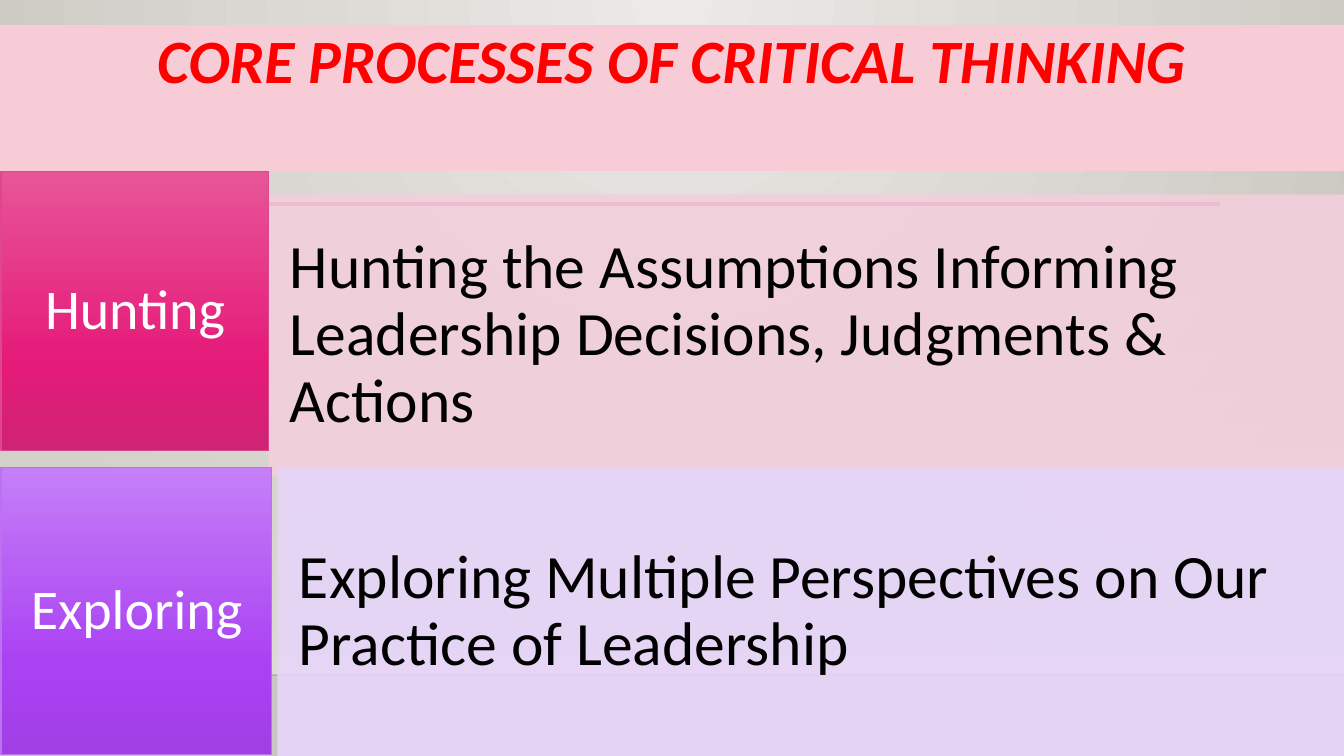
from dataclasses import dataclass

from lxml.etree import SubElement
from pptx import Presentation
from pptx.dml.color import RGBColor
from pptx.enum.shapes import MSO_CONNECTOR, MSO_SHAPE
from pptx.enum.text import MSO_ANCHOR, MSO_AUTO_SIZE, PP_ALIGN
from pptx.oxml.ns import qn
from pptx.util import Emu, Pt

FONT = "Calibri"


@dataclass(frozen=True)
class Stop:
    """One gradient stop, with position and opacity in percent."""
    position: int
    color: str
    opacity: int = 100


@dataclass(frozen=True)
class Box:
    """A rectangle in px."""
    left: int
    top: int
    width: int
    height: int


@dataclass(frozen=True)
class Process:
    """A coloured label tile with its description panel."""
    label: str
    description: str
    tile: Box
    panel: Box
    stops: tuple[Stop, ...]
    tile_line: str
    panel_color: str


PROCESSES = (
    Process("Hunting",
            "Hunting the Assumptions Informing Leadership Decisions, Judgments & Actions",
            Box(1, 172, 268, 279), Box(269, 195, 1075, 281),
            (Stop(0, "E75597"), Stop(69, "E51A79"), Stop(100, "CF2374")),
            "DE478E", "F2CFDB"),
    Process("Exploring",
            "Exploring Multiple Perspectives on Our Practice of Leadership",
            Box(1, 468, 271, 287), Box(278, 468, 1066, 288),
            (Stop(0, "C57FF7"), Stop(69, "AA41F3"), Stop(100, "A13FE5")),
            "BC72F0", "E7D5F9"),
)


def px(length: int) -> Emu:
    """Turn px into EMU at 100.8 px to the inch."""
    return Emu(round(length * 914400 / 100.8))


def rgb(color: str) -> RGBColor:
    """Turn a hex string into a colour."""
    return RGBColor.from_string(color)


def set_opacity(element, percent: int) -> None:
    """Give every colour below an element the same opacity."""
    for color in element.iter(qn("a:srgbClr")):
        SubElement(color, qn("a:alpha"), val=str(percent * 1000))


def set_gradient(fill, element, stops: tuple[Stop, ...], radial: bool = False) -> None:
    """Fill with a top-down gradient, or a radial one from the top centre."""
    fill.gradient()
    gradient = next(element.iter(qn("a:gradFill")))
    for child in list(gradient):
        gradient.remove(child)
    stop_list = SubElement(gradient, qn("a:gsLst"))
    for stop in stops:
        entry = SubElement(stop_list, qn("a:gs"), pos=str(stop.position * 1000))
        SubElement(entry, qn("a:srgbClr"), val=stop.color)
        set_opacity(entry, stop.opacity)
    if radial:
        shade = SubElement(gradient, qn("a:path"), path="circle")
        SubElement(shade, qn("a:fillToRect"), l="43000", t="0", r="43000", b="100000")
    else:
        SubElement(gradient, qn("a:lin"), ang="5400000", scaled="0")


def add_box(slide, box: Box):
    """Add a rectangle without shadow."""
    shape = slide.shapes.add_shape(
        MSO_SHAPE.RECTANGLE, px(box.left), px(box.top), px(box.width), px(box.height))
    shape.shadow.inherit = False
    return shape


def add_rule(slide, left: int, right: int, top: int, color: str, width: float,
             opacity: int = 100) -> None:
    """Add a horizontal line."""
    rule = slide.shapes.add_connector(
        MSO_CONNECTOR.STRAIGHT, px(left), px(top), px(right), px(top))
    rule.line.color.rgb = rgb(color)
    rule.line.width = Pt(width)
    properties = rule._element.spPr
    set_opacity(properties, opacity)
    SubElement(properties, qn("a:effectLst"))


def write_text(shape, text: str, size: int, color: str, alignment: PP_ALIGN,
               anchor: MSO_ANCHOR, side: int, end: int, emphasis: bool = False) -> None:
    """Write one wrapped paragraph with the given insets in px."""
    frame = shape.text_frame
    frame.word_wrap = True
    frame.auto_size = MSO_AUTO_SIZE.NONE
    frame.vertical_anchor = anchor
    frame.margin_left = frame.margin_right = px(side)
    frame.margin_top = frame.margin_bottom = px(end)
    paragraph = frame.paragraphs[0]
    paragraph.alignment = alignment
    paragraph.line_spacing = 0.9
    paragraph.space_before = Pt(0)
    run = paragraph.add_run()
    run.text = text
    font = run.font
    font.name, font.size, font.color.rgb = FONT, Pt(size), rgb(color)
    font.bold = font.italic = emphasis


def add_title(slide) -> None:
    """Place and format the title placeholder."""
    title = slide.shapes.title
    title.left, title.top, title.width, title.height = px(0), px(25), px(1344), px(146)
    title.fill.solid()
    title.fill.fore_color.rgb = rgb("F7CCD6")
    write_text(title, "CORE PROCESSES OF CRITICAL THINKING", 44, "FF0000",
               PP_ALIGN.CENTER, MSO_ANCHOR.TOP, 10, 5, emphasis=True)


def add_backdrop(slide) -> None:
    """Draw the background gradient, the fading floor and the rules."""
    set_gradient(slide.background.fill, slide._element,
                 (Stop(0, "ECEAE7"), Stop(100, "CAC7C1")), radial=True)
    floor = add_box(slide, Box(0, 223, 1344, 452))
    floor.line.fill.background()
    set_gradient(floor.fill, floor._element, (Stop(0, "DFDBD5", 0), Stop(100, "DFDBD5")))
    add_rule(slide, 0, 1344, 675, "000001", 1, opacity=20)
    add_rule(slide, 160, 1220, 204, "B71E42", 2.5)


def add_process(slide, process: Process) -> None:
    """Draw a description panel and its label tile."""
    panel = add_box(slide, process.panel)
    panel.fill.solid()
    panel.fill.fore_color.rgb = panel.line.color.rgb = rgb(process.panel_color)
    panel.line.width = Pt(0.75)
    set_opacity(panel._element.spPr, 90)
    write_text(panel, process.description, 44, "000000",
               PP_ALIGN.LEFT, MSO_ANCHOR.MIDDLE, 21, 66)

    tile = add_box(slide, process.tile)
    set_gradient(tile.fill, tile._element, process.stops)
    tile.line.color.rgb = rgb(process.tile_line)
    tile.line.width = Pt(0.75)
    write_text(tile, process.label, 40, "FFFFFF",
               PP_ALIGN.CENTER, MSO_ANCHOR.MIDDLE, 14, 25)


def main() -> None:
    """Build the slide and save it."""
    presentation = Presentation()
    presentation.slide_width, presentation.slide_height = px(1344), px(756)
    slide = presentation.slides.add_slide(presentation.slide_layouts[5])
    add_backdrop(slide)
    add_title(slide)
    for process in PROCESSES:
        add_process(slide, process)
    presentation.save("out.pptx")


if __name__ == "__main__":
    main()
